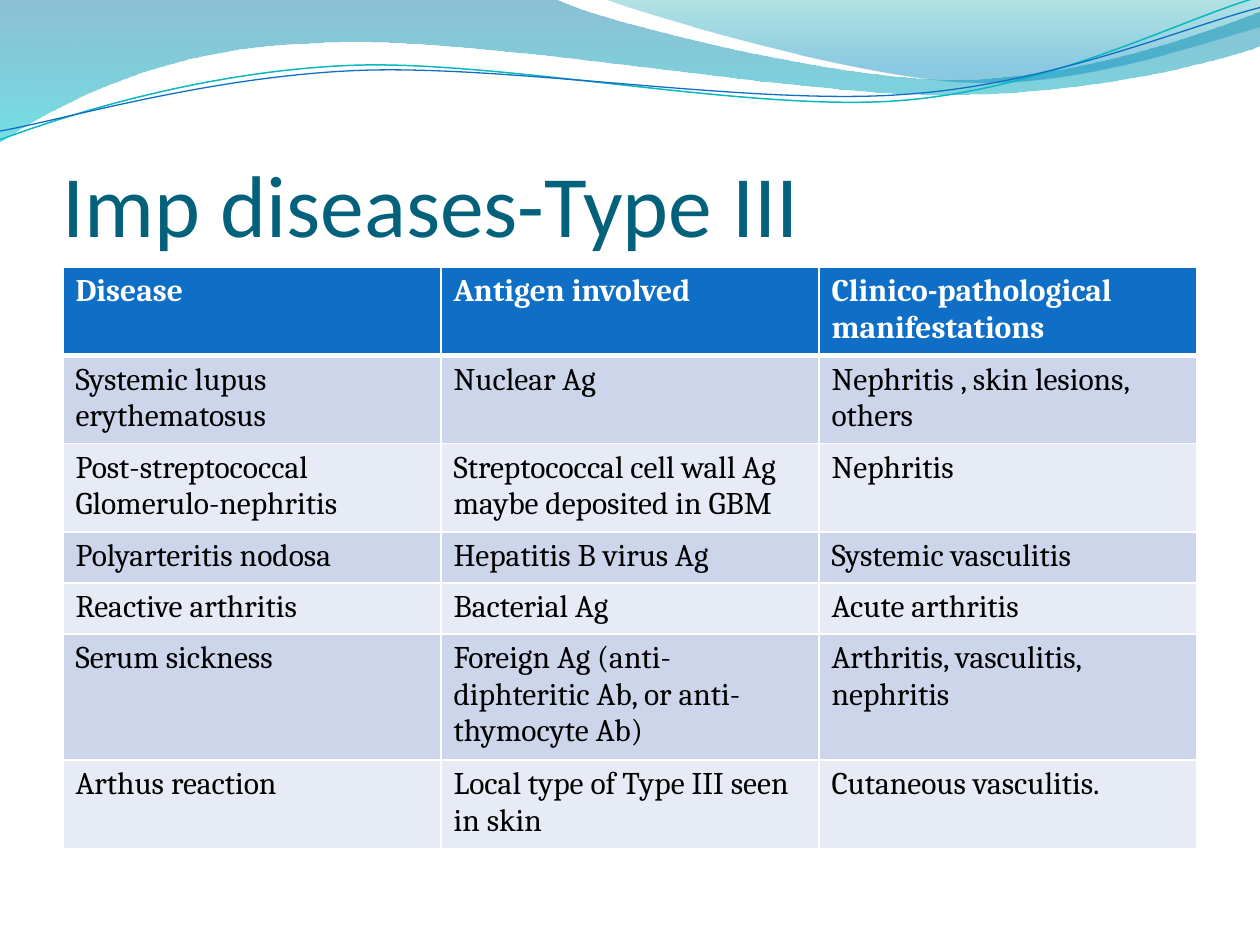
from dataclasses import dataclass

from lxml import etree
from pptx import Presentation
from pptx.dml.color import RGBColor
from pptx.enum.text import MSO_ANCHOR
from pptx.oxml.ns import qn
from pptx.util import Inches, Pt

BOTTOM, TOP = MSO_ANCHOR.BOTTOM, MSO_ANCHOR.TOP
COLS = 10  # grid columns over the slide


@dataclass(frozen=True)
class Theme:
    title: str = "04617B"
    head: str = "0F6FC6"
    bands: tuple = ("CCD5EA", "E7EBF5")
    white: str = "FFFFFF"
    ink: str = "000000"
    teal: str = "0AB8BF"
    display: str = "Calibri"
    body: str = "Cambria"
    big: int = 50
    small: int = 18


THEME = Theme()

# Bands: gradient stops (share, colour, opacity %), start, then lines (2) or curves (6)
BANDS = [
    ([(0, "0074A1", 45), (1, "00C6CF", 55)], (0, 0), [
        (4.4, -0.01), (4.76, 0.17, 6.64, 0.63, 7.58, 0.63),
        (8.53, 0.63, 9.58, 0.26, 10, 0.09), (10.01, 0.36),
        (9.83, 0.44, 8.7, 0.76, 7.46, 0.75),
        (6.22, 0.75, 3.82, 0.28, 2.57, 0.34),
        (1.29, 0.36, 0.46, 0.83, -0.01, 1.13)]),
    ([(0, "00A1A9", 30), (0.8, "008BBF", 45)], (4.79, -0.01), [
        (5.09, 0.11, 6.82, 0.62, 7.69, 0.65),
        (8.56, 0.69, 9.61, 0.32, 10, 0.21), (10, 0)]),
]
# Strands: colour, width, start, curves
STRANDS = [
    (THEME.teal, 0.85, (0, 1.11), [
        (0.48, 0.93, 1.58, 0.57, 2.77, 0.52),
        (3.95, 0.47, 5.93, 0.89, 7.13, 0.8),
        (8.33, 0.71, 9.38, 0.15, 9.98, -0.02)]),
    (THEME.head, 0.75, (0, 1.04), [
        (0.47, 0.96, 1.64, 0.61, 2.83, 0.56),
        (4.03, 0.51, 5.97, 0.84, 7.17, 0.75),
        (8.36, 0.67, 9.41, 0.21, 10, 0.06)]),
]
ROWS = [
    ("Disease", "Antigen involved", "Clinico-pathological manifestations"),
    ("Systemic lupus erythematosus", "Nuclear Ag",
     "Nephritis , skin lesions, others"),
    ("Post-streptococcal Glomerulo-nephritis",
     "Streptococcal cell wall Ag maybe deposited in GBM", "Nephritis"),
    ("Polyarteritis nodosa", "Hepatitis B virus Ag", "Systemic vasculitis"),
    ("Reactive arthritis", "Bacterial Ag", "Acute arthritis"),
    ("Serum sickness", "Foreign Ag (anti-diphteritic Ab, or anti-thymocyte Ab)",
     "Arthritis, vasculitis, nephritis"),
    ("Arthus reaction", "Local type of Type III seen in skin",
     "Cutaneous vasculitis."),
]


def rgb(code):
    return RGBColor.from_string(code)


def write(frame, text, font=THEME.body, size=THEME.small, color=THEME.ink,
          bold=False, anchor=TOP):
    frame.word_wrap = True
    frame.vertical_anchor = anchor
    run = frame.paragraphs[0].add_run()
    run.text = text
    run.font.name, run.font.size = font, Pt(size)
    run.font.bold, run.font.color.rgb = bold, rgb(color)


def outline(slide, box, start, parts, close):
    left, top, width = box[:3]
    unit = width / COLS

    def place(nums):
        return [(Inches(left + x * unit), Inches(top + y * unit))
                for x, y in zip(nums[::2], nums[1::2])]

    pen = slide.shapes.build_freeform(*place(start)[0])
    pen.add_line_segments([place(part)[-1] for part in parts], close=close)
    shape = pen.convert_to_shape()
    shape.shadow.inherit = False
    # Bend the segments that have control points
    for line, part in zip(list(shape.element.iter(qn("a:lnTo"))), parts):
        if len(part) == 6:
            curve = etree.Element(qn("a:cubicBezTo"))
            for x, y in place(part):
                etree.SubElement(curve, qn("a:pt"), x=str(x - shape.left),
                                 y=str(y - shape.top))
            line.getparent().replace(line, curve)
    return shape


def waves(slide, box):
    # Shaded bands
    for stops, start, parts in BANDS:
        shape = outline(slide, box, start, parts, True)
        shape.line.fill.background()
        shape.fill.gradient()
        shape.fill.gradient_angle = 270
        for stop, (share, color, _) in zip(shape.fill.gradient_stops, stops):
            stop.position, stop.color.rgb = share, rgb(color)
        tints = shape.element.spPr.iter(qn("a:srgbClr"))
        for tint, (_, _, alpha) in zip(tints, stops):
            etree.SubElement(tint, qn("a:alpha"), val=str(alpha * 1000))
    # Thin strands
    for color, weight, start, parts in STRANDS:
        shape = outline(slide, box, start, parts, False)
        shape.fill.background()
        shape.line.color.rgb, shape.line.width = rgb(color), Pt(weight)


def title(slide, box, text):
    frame = slide.shapes.add_textbox(*map(Inches, box)).text_frame
    frame.margin_left = frame.margin_right = frame.margin_bottom = 0
    write(frame, text, font=THEME.display, size=THEME.big, color=THEME.title,
          anchor=BOTTOM)


def border(cell, **widths):
    """Draw white edges; the schema wants them ahead of the fill."""
    props = cell._tc.get_or_add_tcPr()
    for spot, side in enumerate("LRTB"):
        line = etree.Element(qn("a:ln" + side), w=str(Pt(widths.get(side, 1))))
        fill = etree.SubElement(line, qn("a:solidFill"))
        etree.SubElement(fill, qn("a:srgbClr"), val=THEME.white)
        props.insert(spot, line)


def grid(slide, box, rows):
    shape = slide.shapes.add_table(len(rows), len(rows[0]), *map(Inches, box))
    table = shape.table
    for r, row in enumerate(rows):
        # Rows grow with their text
        table.rows[r].height = Inches(box[3] / len(rows))
        head = r == 0
        for c, text in enumerate(row):
            cell = table.cell(r, c)
            cell.fill.solid()
            cell.fill.fore_color.rgb = rgb(
                THEME.head if head else THEME.bands[(r - 1) % 2])
            write(cell.text_frame, text, bold=head,
                  color=THEME.white if head else THEME.ink)
            border(cell, B=3 if head else 1, T=3 if r == 1 else 1)


def main():
    deck = Presentation()
    deck.slide_width, deck.slide_height = Inches(10), Inches(7.5)
    slide = deck.slides.add_slide(deck.slide_layouts[6])
    waves(slide, (0, 0, 10, 1.14))
    title(slide, (0.5, 0.77, 9, 1.25), "Imp diseases-Type III")
    grid(slide, (0.5, 2.12, 9, 2.84), ROWS)
    deck.save("out.pptx")


if __name__ == "__main__":
    main()
